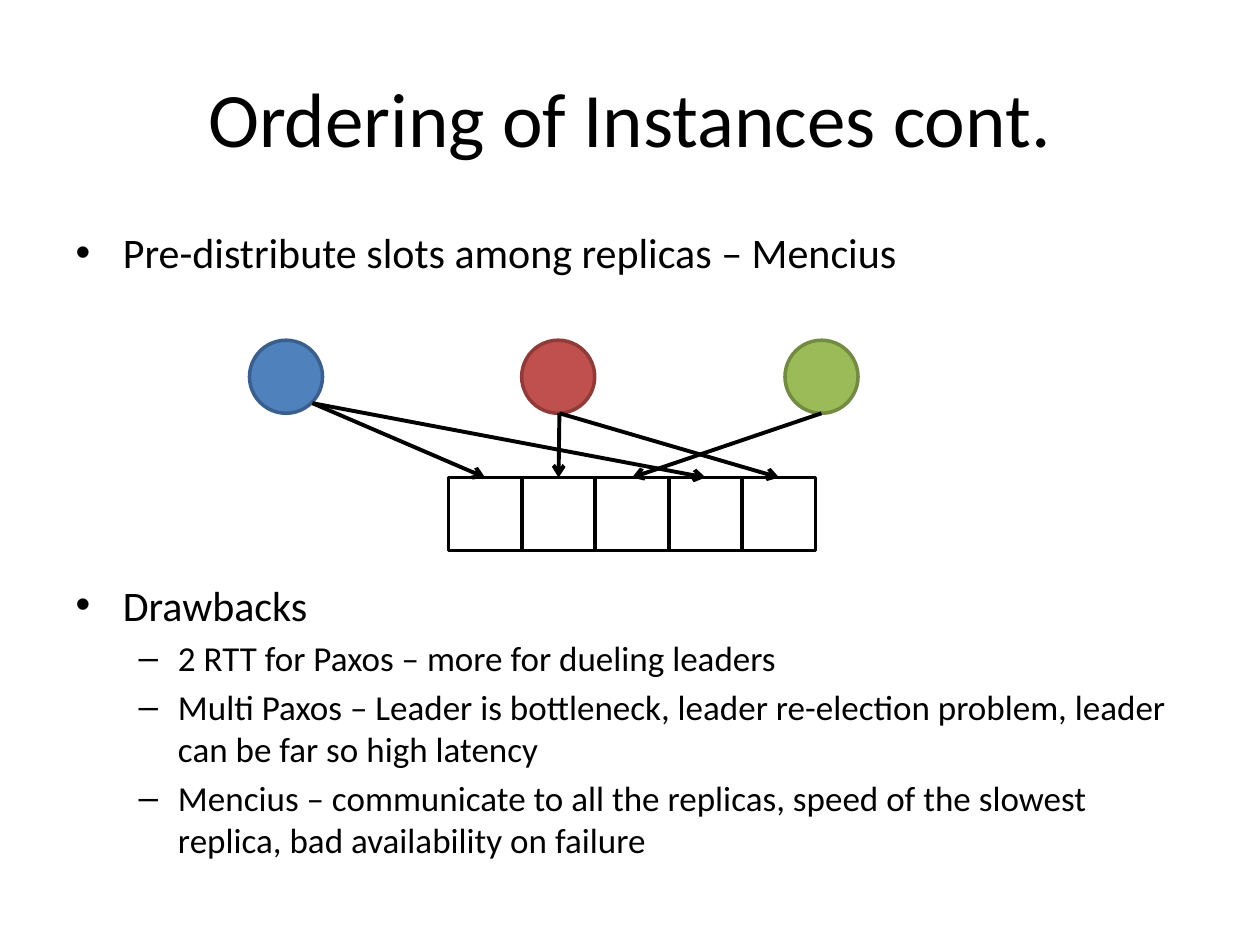
"""Build a slide on how replicas order consensus instances."""
from pptx import Presentation
from pptx import util as u
from pptx.dml.color import RGBColor
from pptx.enum import shapes, text
from pptx.oxml.ns import qn
from lxml import etree

SIZE = 0.58
CELL_PITCH = 0.5833
ROW_LEFT, ROW_TOP = 3.56, 3.79
REPLICA_TOP = 2.7
REPLICAS = [
    (1.98, "4F81BD", "3A5F8C"),
    (4.14, "C0504D", "8E3B39"),
    (6.23, "9BBB59", "738A42"),
]
ARROWS = [
    ((2.48, 3.2), 0),
    ((4.44, 3.28), 1),
    ((6.52, 3.28), 2),
    ((2.48, 3.2), 3),
    ((4.44, 3.28), 4),
]
BULLETS = [
    ("Pre-distribute slots among replicas – Mencius", 0, 0),
    ("Drawbacks", 0, 172.5),
    ("2 RTT for Paxos – more for dueling leaders", 1, 4),
    ("Multi Paxos – Leader is bottleneck, leader re-election problem, "
     "leader can be far so high latency", 1, 4),
    ("Mencius – communicate to all the replicas, speed of the slowest "
     "replica, bad availability on failure", 1, 4),
]


def color(value):
    """Return the colour for a hex string."""
    return RGBColor.from_string(value)


def write(paragraph, words, size=24, level=0, before=0, align=None):
    """Put formatted words into a paragraph."""
    paragraph.level = level
    paragraph.space_before = u.Pt(before)
    paragraph.alignment = align
    run = paragraph.add_run()
    run.text = words
    run.font.name = "Calibri"
    run.font.size = u.Pt(size)
    run.font.color.rgb = color("000000")


def place(shape, left, top, width, height, anchor):
    """Move a placeholder and return its text frame."""
    shape.left, shape.top = u.Inches(left), u.Inches(top)
    shape.width, shape.height = u.Inches(width), u.Inches(height)
    frame = shape.text_frame
    frame.word_wrap = True
    frame.auto_size = text.MSO_AUTO_SIZE.NONE
    frame.vertical_anchor = anchor
    return frame


def add_square(slide, kind, left, top, fill, line):
    """Add an outlined shape of equal width and height."""
    shape = slide.shapes.add_shape(
        kind, u.Inches(left), u.Inches(top), u.Inches(SIZE), u.Inches(SIZE))
    shape.shadow.inherit = False
    shape.fill.solid()
    shape.fill.fore_color.rgb = color(fill)
    shape.line.color.rgb = color(line)
    shape.line.width = u.Pt(2)


def add_arrow(slide, start, end):
    """Add a black line with an open arrowhead at its end."""
    arrow = slide.shapes.add_connector(
        shapes.MSO_CONNECTOR.STRAIGHT, *map(u.Inches, start + end))
    arrow.line.color.rgb = color("000000")
    arrow.line.width = u.Pt(2.25)
    etree.SubElement(arrow.line._get_or_add_ln(), qn("a:tailEnd"), type="arrow")
    etree.SubElement(arrow._element.spPr, qn("a:effectLst"))


def add_bullets(frame):
    """Fill the body with its two levels of bullets."""
    for index, (words, level, before) in enumerate(BULLETS):
        paragraph = frame.add_paragraph() if index else frame.paragraphs[0]
        write(paragraph, words, size=20 if level else 24, level=level, before=before)


def add_diagram(slide):
    """Draw the replicas, the slots and the arrows between them."""
    for left, fill, line in REPLICAS:
        add_square(slide, shapes.MSO_SHAPE.OVAL, left, REPLICA_TOP, fill, line)
    for index in range(len(ARROWS)):
        add_square(slide, shapes.MSO_SHAPE.RECTANGLE,
                   ROW_LEFT + index * CELL_PITCH, ROW_TOP, "FFFFFF", "000000")
    for start, slot in ARROWS:
        center = ROW_LEFT + slot * CELL_PITCH + SIZE / 2
        add_arrow(slide, start, (center, ROW_TOP))


def main():
    """Build and save the presentation."""
    presentation = Presentation()
    presentation.slide_width = u.Inches(10)
    presentation.slide_height = u.Inches(7.5)
    slide = presentation.slides.add_slide(presentation.slide_layouts[1])
    title = place(slide.shapes.title, 0.5, 0.3, 9, 1.25, text.MSO_ANCHOR.MIDDLE)
    write(title.paragraphs[0], "Ordering of Instances cont.", size=44,
          align=text.PP_ALIGN.CENTER)
    add_bullets(place(slide.placeholders[1], 0.5, 1.75, 9, 4.95, text.MSO_ANCHOR.TOP))
    add_diagram(slide)
    presentation.save("out.pptx")


if __name__ == "__main__":
    main()
